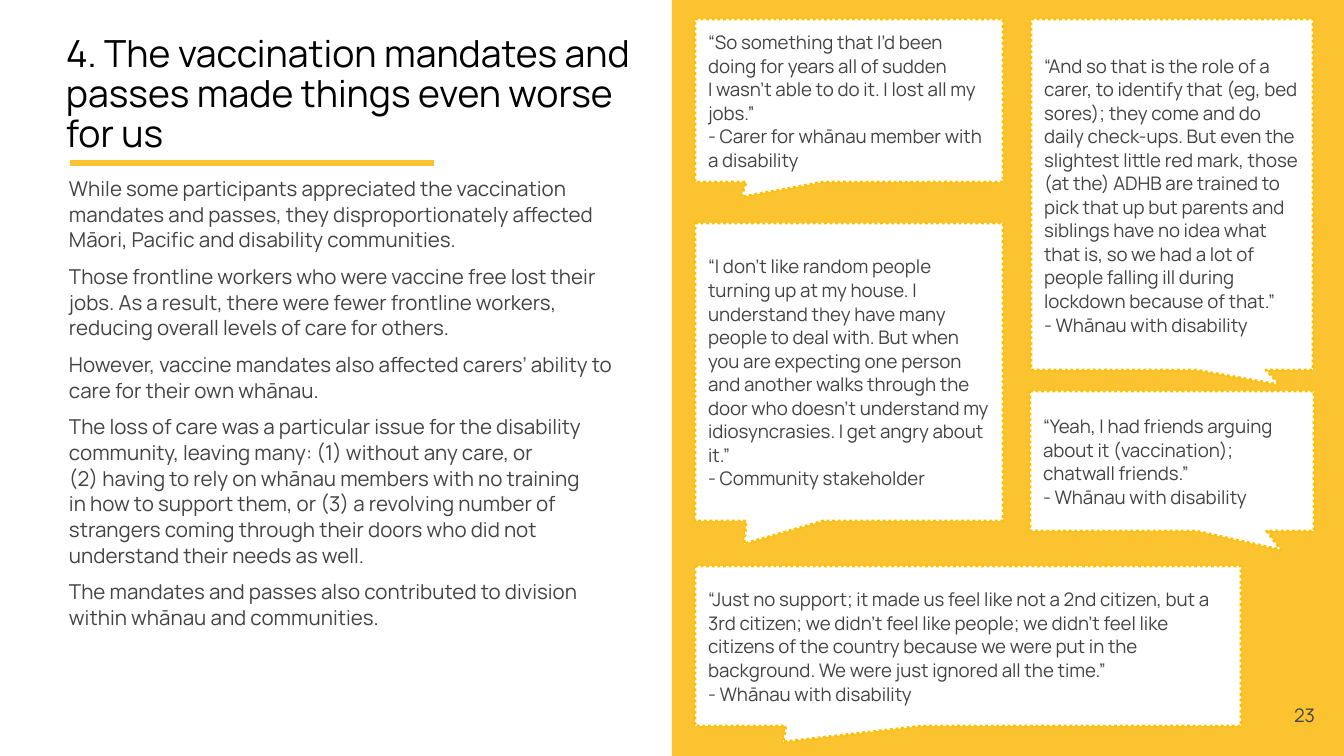
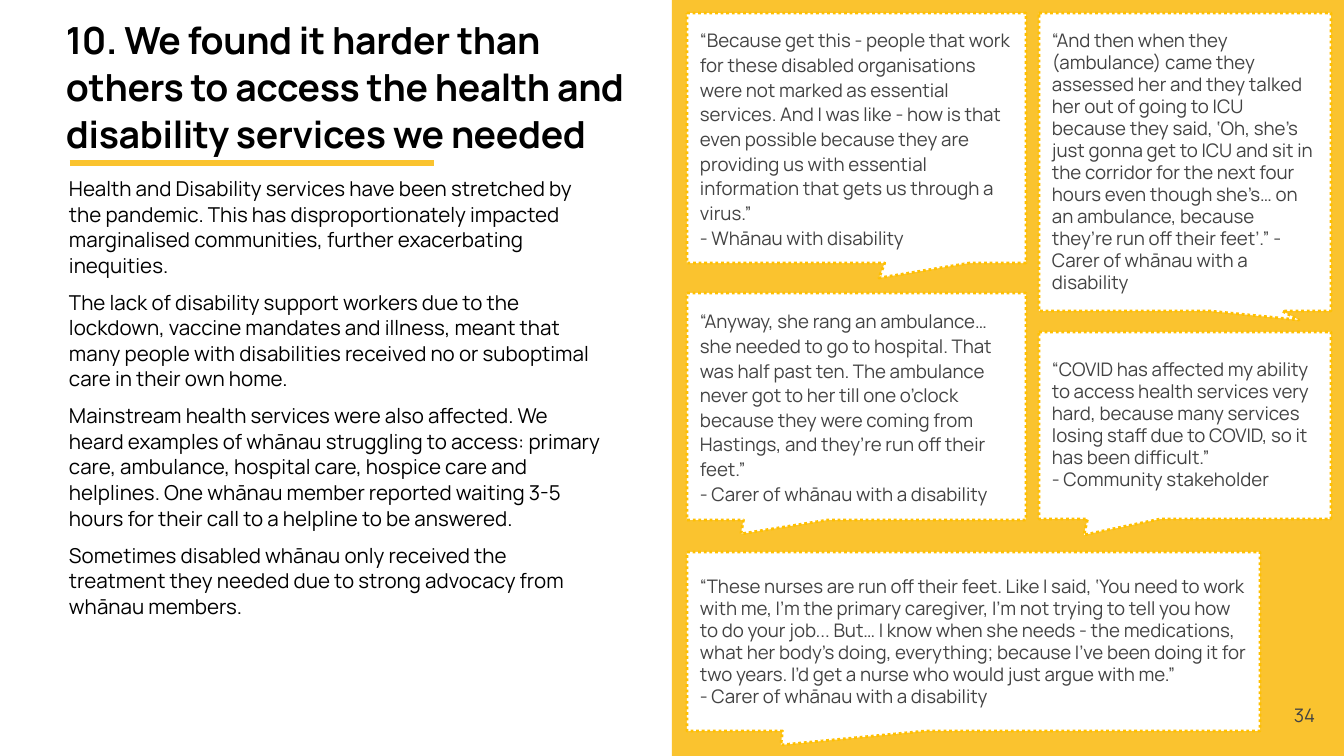
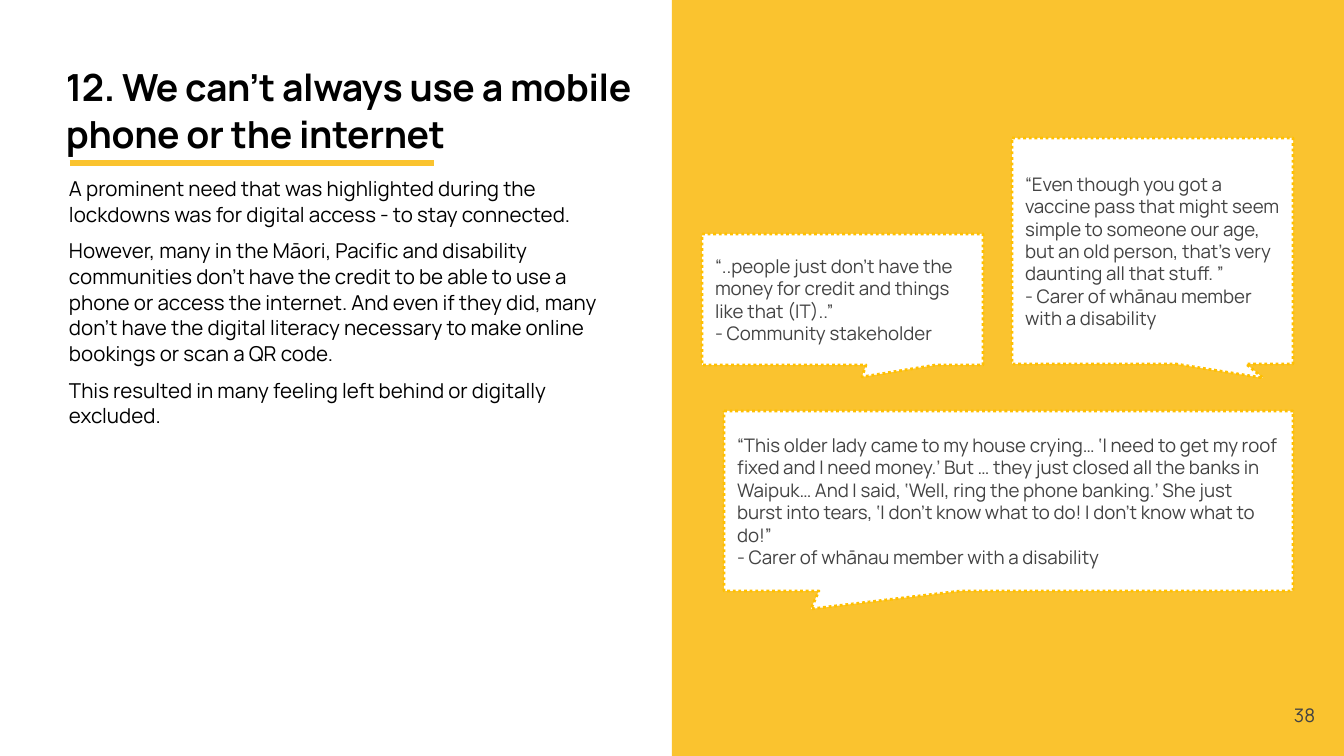
from dataclasses import dataclass

from lxml import etree
from pptx import Presentation
from pptx.dml.color import RGBColor
from pptx.enum.dml import MSO_LINE
from pptx.enum.shapes import MSO_CONNECTOR, MSO_SHAPE
from pptx.enum.text import MSO_ANCHOR, MSO_AUTO_SIZE, PP_ALIGN
from pptx.oxml.ns import qn
from pptx.util import Pt

RECT, CALLOUT = MSO_SHAPE.RECTANGLE, MSO_SHAPE.RECTANGULAR_CALLOUT
STRAIGHT, DOTS = MSO_CONNECTOR.STRAIGHT, MSO_LINE.ROUND_DOT
TOP, MIDDLE, BOTTOM = MSO_ANCHOR.TOP, MSO_ANCHOR.MIDDLE, MSO_ANCHOR.BOTTOM
LEFT, CENTER = PP_ALIGN.LEFT, PP_ALIGN.CENTER
FIXED = MSO_AUTO_SIZE.NONE

SCALE = 914400 / 134.4
WIDE, HIGH = 1344, 756
PAD = 13


def px(num):
    return round(num * SCALE)


def rgb(code):
    return RGBColor.from_string(code)


@dataclass(frozen=True)
class Theme:
    font: str = "Manrope"
    black: str = "000000"
    gray: str = "434343"
    white: str = "FFFFFF"
    gold: str = "FAC32F"
    edge: str = "FFC000"
    head: int = 20
    body: int = 11
    note: int = 10
    rule: float = 3
    dots: float = 1.5


class Deck:
    """Holds the theme and the slide being built."""

    def __init__(self, theme):
        self.theme = theme
        self.prs = Presentation()
        self.prs.slide_width, self.prs.slide_height = px(WIDE), px(HIGH)
        self.slide = None

    def start(self):
        layout = self.prs.slide_layouts[1]
        self.slide = self.prs.slides.add_slide(layout)

    def place(self, shape, box):
        shape.left, shape.top, shape.width, shape.height = map(px, box)

    def paint(self, shape, color):
        shape.fill.solid()
        shape.fill.fore_color.rgb = rgb(color)

    def label(self, shape, paras, size, color, anchor=TOP, pad=0, gap=0,
              lead=1.0, align=LEFT, bold=False, track=0):
        """Fill a shape with paragraphs; a newline is a line break."""
        frame = shape.text_frame
        frame.word_wrap, frame.auto_size = True, FIXED
        frame.vertical_anchor = anchor
        frame.margin_left = frame.margin_right = px(pad)
        frame.margin_top = frame.margin_bottom = px(pad)
        for i, text in enumerate(paras):
            para = frame.add_paragraph() if i else frame.paragraphs[0]
            para.alignment, para.line_spacing = align, lead
            para.space_before = Pt(gap)
            for j, part in enumerate(text.split("\n")):
                if j:
                    para.add_line_break()
                run = para.add_run()
                run.text = part
                font = run.font
                font.name, font.size, font.bold = self.theme.font, Pt(size), bold
                font.color.rgb = rgb(color)
                if track:
                    run._r.get_or_add_rPr().set("spc", str(track))

    def title(self, text, wide, **style):
        shape = self.slide.shapes.title
        self.place(shape, (66, 50, wide, 106))
        self.paint(shape, self.theme.white)
        self.label(shape, [text], self.theme.head, self.theme.black, BOTTOM, **style)

    def body(self, paras, wide, high, color):
        shape = self.slide.placeholders[1]
        self.place(shape, (69, 175, wide, high))
        self.label(shape, paras, self.theme.body, color, gap=6, lead=1.04)
        for para in shape.text_frame.paragraphs:
            props = para._p.get_or_add_pPr()
            props.set("marL", "0")
            props.set("indent", "0")
            etree.SubElement(props, qn("a:buNone"))

    def band(self):
        half = WIDE // 2
        shape = self.slide.shapes.add_shape(RECT, *map(px, (half, 0, half, HIGH)))
        shape.shadow.inherit = False
        self.paint(shape, self.theme.gold)
        shape.line.fill.background()

    def rule(self):
        line = self.slide.shapes.add_connector(STRAIGHT, *map(px, (70, 163, 434, 163)))
        line.line.color.rgb = rgb(self.theme.gold)
        line.line.width = Pt(self.theme.rule)
        etree.SubElement(line._element.spPr, qn("a:effectLst"))

    def quote(self, box, tip, paras, lead):
        """Draw a callout whose tail ends at the point tip."""
        left, top, wide, high = box
        shape = self.slide.shapes.add_shape(CALLOUT, *map(px, box))
        shape.shadow.inherit = False
        shape.adjustments[0] = (tip[0] - left) / wide - 0.5
        shape.adjustments[1] = (tip[1] - top) / high - 0.5
        self.paint(shape, self.theme.white)
        shape.line.color.rgb = rgb(self.theme.edge)
        shape.line.width = Pt(self.theme.dots)
        shape.line.dash_style = DOTS
        self.label(shape, paras, self.theme.note, self.theme.gray, MIDDLE, PAD, lead=lead)

    def number(self, num):
        shape = self.slide.shapes.add_textbox(*map(px, (1265, 675, 79, 81)))
        self.label(shape, [str(num)], self.theme.note, self.theme.gray,
                   MIDDLE, PAD, align=CENTER)


THEME = Theme()
PLAIN = dict(lead=0.9)
STRONG = dict(lead=1.05, bold=True, track=-20)

PAGES = [
    dict(
        num=23, style=PLAIN, color=THEME.gray, head=582, size=(558, 551),
        title="4. The vaccination mandates and passes made things even worse for us",
        body=[
            "While some participants appreciated the vaccination mandates and passes, "
            "they disproportionately affected Māori, Pacific and disability communities.",
            "Those frontline workers who were vaccine free lost their jobs. As a result, "
            "there were fewer frontline workers, reducing overall levels of care for others.",
            "However, vaccine mandates also affected carers’ ability to care for their "
            "own whānau.",
            "The loss of care was a particular issue for the disability community, leaving "
            "many: (1) without any care, or \n(2) having to rely on whānau members with no "
            "training \nin how to support them, or (3) a revolving number of strangers "
            "coming through their doors who did not understand their needs as well.",
            "The mandates and passes also contributed to division within whānau and "
            "communities.",
        ],
        quotes=[
            ((695, 19, 308, 163), (741, 197), [
                "“So something that I’d been doing for years all of sudden \n"
                "I wasn’t able to do it. I lost all my jobs.”",
                "- Carer for whānau member with a disability"], 1.05),
            ((1031, 19, 282, 351), (1280, 385), [
                "“And so that is the role of a carer, to identify that (eg, bed sores); "
                "they come and do daily check-ups. But even the slightest little red mark, "
                "those (at the) ADHB are trained to pick that up but parents and siblings "
                "have no idea what that is, so we had a lot of people falling ill during "
                "lockdown because of that.”",
                "- Whānau with disability"], 1.05),
            ((695, 223, 308, 298), (744, 544), [
                "“I don’t like random people turning up at my house. I understand they "
                "have many people to deal with. But when you are expecting one person and "
                "another walks through the door who doesn’t understand my idiosyncrasies. "
                "I get angry about it.”",
                "- Community stakeholder"], 1.05),
            ((1030, 391, 284, 140), (1281, 550), [
                "“Yeah, I had friends arguing about it (vaccination); chatwall friends.”",
                "- Whānau with disability"], 1.05),
            ((695, 566, 546, 160), (783, 742), [
                "“Just no support; it made us feel like not a 2nd citizen, but a 3rd "
                "citizen; we didn’t feel like people; we didn’t feel like citizens of the "
                "country because we were put in the background. We were just ignored all "
                "the time.”",
                "- Whānau with disability"], 1.05),
        ],
    ),
    dict(
        num=34, style=STRONG, color=THEME.black, head=582, size=(536, 551),
        title="10. We found it harder than others to access the health and disability "
              "services we needed",
        body=[
            "Health and Disability services have been stretched by the pandemic. This has "
            "disproportionately impacted marginalised communities, further exacerbating "
            "inequities.",
            "The lack of disability support workers due to the lockdown, vaccine mandates "
            "and illness, meant that many people with disabilities received no or "
            "suboptimal care in their own home.",
            "Mainstream health services were also affected. We heard examples of whānau "
            "struggling to access: primary care, ambulance, hospital care, hospice care "
            "and helplines. One whānau member reported waiting 3-5 hours for their call "
            "to a helpline to be answered.",
            "Sometimes disabled whānau only received the treatment they needed due to "
            "strong advocacy from whānau members.",
        ],
        quotes=[
            ((687, 13, 339, 250), (879, 278), [
                "“Because get this - people that work for these disabled organisations "
                "were not marked as essential services. And I was like - how is that even "
                "possible because they are providing us with essential information that "
                "gets us through a virus.”",
                "- Whānau with disability"], 1.1),
            ((1039, 13, 292, 298), (1299, 320), [
                "“And then when they (ambulance) came they assessed her and they talked "
                "her out of going to ICU because they said, ‘Oh, she’s just gonna get to "
                "ICU and sit in the corridor for the next four hours even though she’s… on "
                "an ambulance, because they’re run off their feet’.” - Carer of whānau "
                "with a disability"], 0.98),
            ((687, 293, 339, 227), (741, 534), [
                "“Anyway, she rang an ambulance… she needed to go to hospital. That was "
                "half past ten. The ambulance never got to her till one o’clock because "
                "they were coming from Hastings, and they’re run off their feet.”",
                "- Carer of whānau with a disability"], 1.1),
            ((1039, 332, 292, 187), (1084, 535), [
                "“COVID has affected my ability to access health services very hard, "
                "because many services losing staff due to COVID, so it has been "
                "difficult.”",
                "- Community stakeholder"], 0.98),
            ((687, 552, 573, 179), (781, 745), [
                "“These nurses are run off their feet. Like I said, ‘You need to work with "
                "me, I’m the primary caregiver, I’m not trying to tell you how to do your "
                "job... But… I know when she needs - the medications, what her body’s "
                "doing, everything; because I’ve been doing it for two years. I’d get a "
                "nurse who would just argue with me.”",
                "- Carer of whānau with a disability"], 0.98),
        ],
    ),
    dict(
        num=38, style=STRONG, color=THEME.black, head=605, size=(536, 313),
        title="12. We can’t always use a mobile phone or the internet",
        body=[
            "A prominent need that was highlighted during the lockdowns was for digital "
            "access - to stay connected.",
            "However, many in the Māori, Pacific and disability communities don’t have the "
            "credit to be able to use a phone or access the internet. And even if they "
            "did, many don’t have the digital literacy necessary to make online bookings "
            "or scan a QR code.",
            "This resulted in many feeling left behind or digitally excluded.",
        ],
        quotes=[
            ((702, 234, 281, 131), (862, 377), [
                "“..people just don’t have the money for credit and things like that "
                "(IT)..”",
                "- Community stakeholder"], 1.0),
            ((1012, 138, 281, 226), (1263, 378), [
                "“Even though you got a vaccine pass that might seem simple to someone our "
                "age, but an old person, that’s very daunting all that stuff. ”",
                "- Carer of whānau member with a disability"], 1.0),
            ((724, 411, 569, 180), (811, 609), [
                "“This older lady came to my house crying… ‘I need to get my roof fixed "
                "and I need money.’ But … they just closed all the banks in Waipuk… And I "
                "said, ‘Well, ring the phone banking.’ She just burst into tears, ‘I don’t "
                "know what to do! I don’t know what to do!”",
                "- Carer of whānau member with a disability"], 1.0),
        ],
    ),
]


def main():
    deck = Deck(THEME)
    for page in PAGES:
        deck.start()
        deck.band()
        deck.rule()
        deck.title(page["title"], page["head"], **page["style"])
        deck.body(page["body"], *page["size"], page["color"])
        for quote in page["quotes"]:
            deck.quote(*quote)
        deck.number(page["num"])
    deck.prs.save("out.pptx")


if __name__ == "__main__":
    main()
